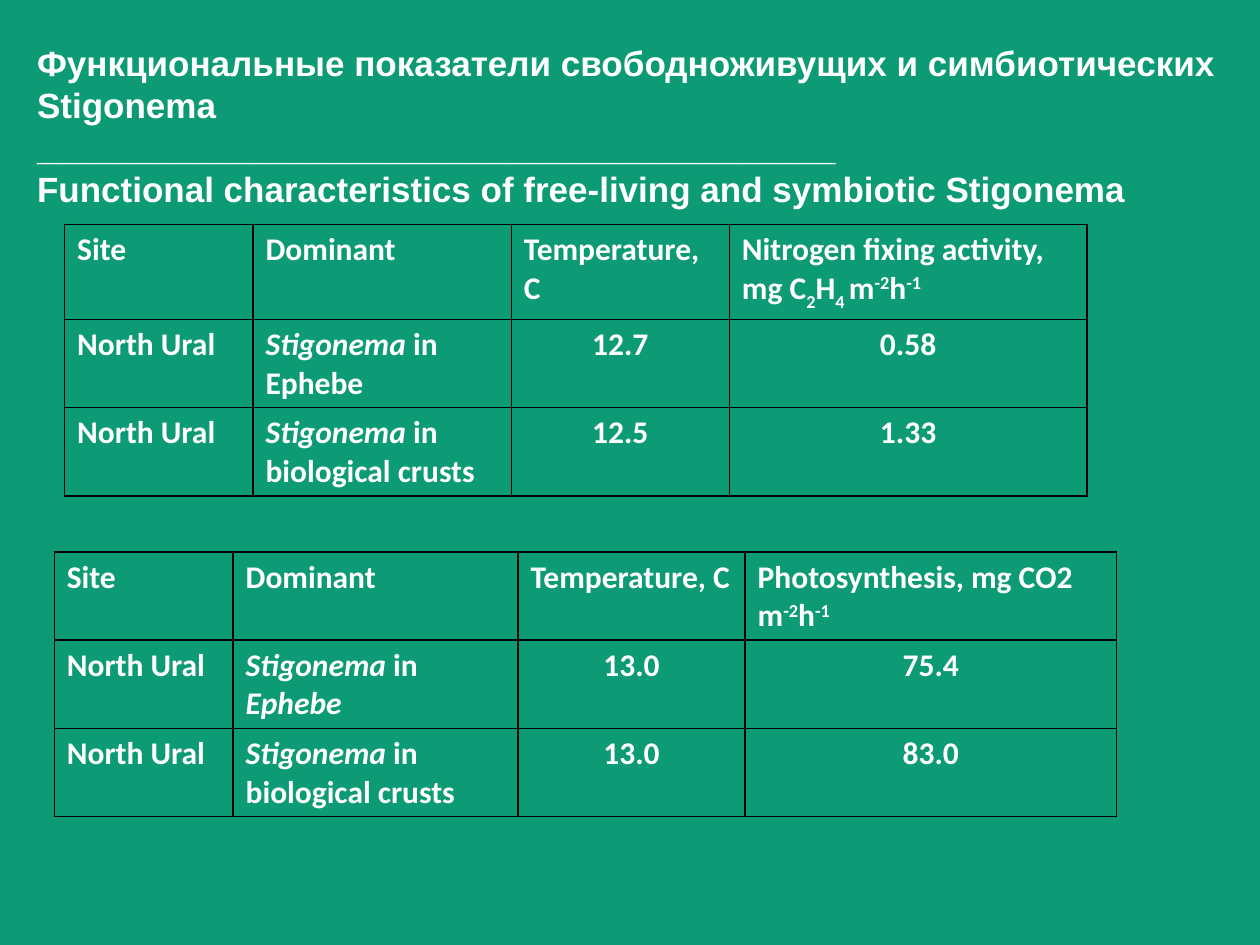
from lxml import etree
from pptx import Presentation
from pptx.dml.color import RGBColor
from pptx.enum.text import MSO_AUTO_SIZE, PP_ALIGN
from pptx.oxml.ns import qn
from pptx.util import Pt

CENTER = PP_ALIGN.CENTER
LEFT = PP_ALIGN.LEFT
SHAPE_TO_FIT_TEXT = MSO_AUTO_SIZE.SHAPE_TO_FIT_TEXT

COLORS = {"background": "0C9B74", "text": "FFFFFF", "border": "000000"}
BASELINES = {"sub": "-30000", "super": "30000"}

TITLE_LINES = [
    "Функциональные показатели свободноживущих и симбиотических Stigonema",
    "_" * 41,
    "Functional characteristics of free-living and symbiotic Stigonema",
]
PER_AREA_AND_HOUR = [("m", ""), ("-2", "super"), ("h", ""), ("-1", "super")]
CRUSTS = [("Stigonema", "italic"), (" in biological crusts", "")]

NITROGEN_ROWS = [
    ["Site", "Dominant", "Temperature, C",
     [("Nitrogen fixing activity, mg С", ""), ("2", "sub"), ("Н", ""), ("4 ", "sub"),
      *PER_AREA_AND_HOUR]],
    ["North Ural", [("Stigonema ", "italic"), ("in Ephebe", "")], "12.7", "0.58"],
    ["North Ural", CRUSTS, "12.5", "1.33"],
]
PHOTOSYNTHESIS_ROWS = [
    ["Site", "Dominant", "Temperature, C",
     [("Photosynthesis, mg СО2 ", ""), *PER_AREA_AND_HOUR]],
    ["North Ural", [("Stigonema ", "italic"), ("in ", ""), ("Ephebe", "italic")],
     "13.0", "75.4"],
    ["North Ural", CRUSTS, "13.0", "83.0"],
]


def color(name):
    return RGBColor.from_string(COLORS[name])


def add_run(paragraph, text, font_name, size, style=""):
    run = paragraph.add_run()
    run.text = text
    run.font.name = font_name
    run.font.size = Pt(size)
    run.font.bold = True
    run.font.color.rgb = color("text")
    if style == "italic":
        run.font.italic = True
    elif style in BASELINES:
        run._r.get_or_add_rPr().set("baseline", BASELINES[style])


def add_title(slide, left, top, width, height):
    shape = slide.shapes.add_textbox(Pt(left), Pt(top), Pt(width), Pt(height))
    frame = shape.text_frame
    frame.word_wrap = True
    frame.auto_size = SHAPE_TO_FIT_TEXT
    for index, line in enumerate(TITLE_LINES):
        paragraph = frame.add_paragraph() if index else frame.paragraphs[0]
        add_run(paragraph, line, "Arial", 20)


def style_cell(cell):
    properties = cell._tc.get_or_add_tcPr()
    for side in ("L", "R", "T", "B"):
        line = etree.SubElement(properties, qn(f"a:ln{side}"), w=str(Pt(1)))
        fill = etree.SubElement(line, qn("a:solidFill"))
        etree.SubElement(fill, qn("a:srgbClr"), val=COLORS["border"])
    cell.fill.background()


def fill_cell(cell, content, alignment):
    style_cell(cell)
    paragraph = cell.text_frame.paragraphs[0]
    paragraph.alignment = alignment
    runs = [(content, "")] if isinstance(content, str) else content
    for text, style in runs:
        add_run(paragraph, text, "Calibri", 18, style)


def add_data_table(slide, left, top, widths, heights, rows):
    frame = slide.shapes.add_table(
        len(rows), len(widths), Pt(left), Pt(top), Pt(sum(widths)), Pt(sum(heights)))
    table = frame.table
    table.first_row = False
    table.horz_banding = False
    for column, width in zip(table.columns, widths):
        column.width = Pt(width)
    for row, height in zip(table.rows, heights):
        row.height = Pt(height)
    for row_index, row in enumerate(rows):
        for column_index, content in enumerate(row):
            is_value = row_index > 0 and column_index > 1
            fill_cell(table.cell(row_index, column_index), content,
                      CENTER if is_value else LEFT)


def main():
    presentation = Presentation()
    presentation.slide_width = Pt(720)
    presentation.slide_height = Pt(540)
    slide = presentation.slides.add_slide(presentation.slide_layouts[6])
    slide.background.fill.solid()
    slide.background.fill.fore_color.rgb = color("background")

    add_title(slide, 14.1, 20.2, 692, 126)
    add_data_table(slide, 36.9, 128.2, [107.7, 147.6, 124.6, 204.3],
                   [54.2, 50.4, 50.4], NITROGEN_ROWS)
    add_data_table(slide, 31, 315.4, [102.2, 162.8, 129.8, 212.2],
                   [50.4] * 3, PHOTOSYNTHESIS_ROWS)
    presentation.save("out.pptx")


if __name__ == "__main__":
    main()
